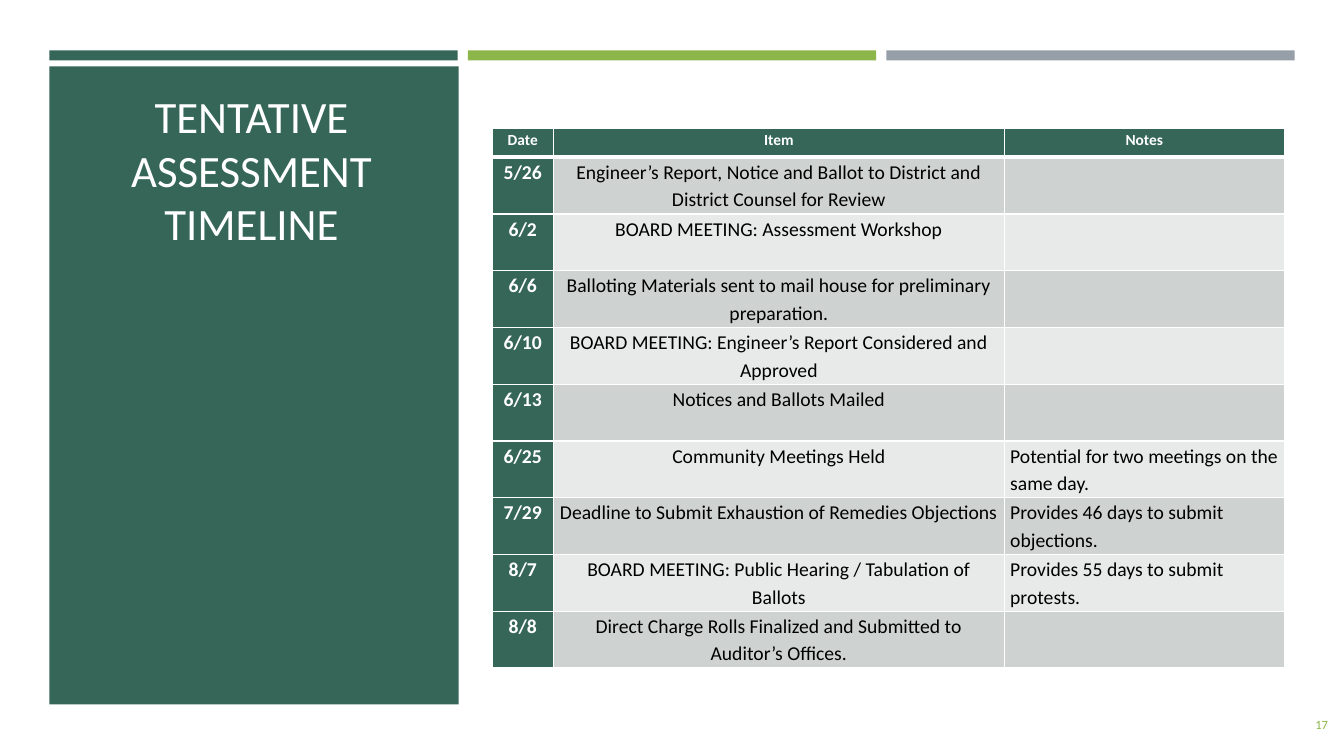
from lxml import etree
from pptx import Presentation
from pptx.dml.color import RGBColor
from pptx.enum.shapes import MSO_SHAPE
from pptx.enum.text import MSO_ANCHOR, PP_ALIGN
from pptx.oxml.ns import qn
from pptx.util import Inches, Pt

RECT = MSO_SHAPE.RECTANGLE
TOP, MIDDLE = MSO_ANCHOR.TOP, MSO_ANCHOR.MIDDLE
LEFT, CENTER, RIGHT = PP_ALIGN.LEFT, PP_ALIGN.CENTER, PP_ALIGN.RIGHT

GREEN, LIME, GRAY = "366658", "8CB64A", "969FA7"
WHITE, BLACK = "FFFFFF", "000000"
BANDS = ["CED3D1", "E8EAEA"]

TITLE = ["TENTATIVE", "ASSESSMENT TIMELINE"]
PAGE_NUMBER = "17"
HEADINGS = ("Date", "Item", "Notes")
TIMELINE = [
    ("5/26", "Engineer’s Report, Notice and Ballot to District and District Counsel for Review", ""),
    ("6/2", "BOARD MEETING: Assessment Workshop", ""),
    ("6/6", "Balloting Materials sent to mail house for preliminary preparation.", ""),
    ("6/10", "BOARD MEETING: Engineer’s Report Considered and Approved", ""),
    ("6/13", "Notices and Ballots Mailed", ""),
    ("6/25", "Community Meetings Held", "Potential for two meetings on the same day."),
    ("7/29", "Deadline to Submit Exhaustion of Remedies Objections", "Provides 46 days to submit objections."),
    ("8/7", "BOARD MEETING: Public Hearing / Tabulation of Ballots", "Provides 55 days to submit protests."),
    ("8/8", "Direct Charge Rolls Finalized and Submitted to Auditor’s Offices.", ""),
]
COLUMN_WIDTHS = [0.61, 4.47, 2.78]
TABLE_LEFT, TABLE_TOP, TABLE_HEIGHT, HEADER_HEIGHT = 4.88, 1.27, 5.36, 0.29
BAR_LEFT, BAR_STEP = 0.49, 4.15


def color(value):
    return RGBColor.from_string(value)


def add_block(left, top, width, height, fill):
    block = slide.shapes.add_shape(RECT, *map(Inches, (left, top, width, height)))
    block.shadow.inherit = False
    block.fill.solid()
    block.fill.fore_color.rgb = color(fill)
    block.line.fill.background()


def write(paragraph, text, align, size, ink, bold=False):
    paragraph.text = text
    paragraph.alignment = align
    for name, value in {"name": "Calibri", "size": Pt(size), "bold": bold}.items():
        setattr(paragraph.font, name, value)
    paragraph.font.color.rgb = color(ink)


def add_text(left, top, width, height, lines, anchor, *style):
    frame = slide.shapes.add_textbox(*map(Inches, (left, top, width, height))).text_frame
    frame.word_wrap = True
    frame.vertical_anchor = anchor
    for index, line in enumerate(lines):
        write(frame.add_paragraph() if index else frame.paragraphs[0], line, *style)


def add_borders(cell, widths):
    properties = cell._tc.get_or_add_tcPr()
    for side, width in widths.items():
        border = etree.SubElement(properties, qn("a:ln" + side), w=str(Pt(width)))
        fill = etree.SubElement(border, qn("a:solidFill"))
        etree.SubElement(fill, qn("a:srgbClr"), val=WHITE)


def fill_cell(cell, text, row, column):
    header = row == 0
    strong = header or column == 0
    add_borders(cell, {"L": 1, "R": 1, "T": 3 if row == 1 else 1, "B": 3 if header else 1})
    cell.fill.solid()
    cell.fill.fore_color.rgb = color(GREEN if strong else BANDS[(row - 1) % 2])
    margins = {"margin_left": 0.06, "margin_right": 0.06, "margin_top": 0, "margin_bottom": 0}
    for name, value in margins.items():
        setattr(cell, name, Inches(value))
    paragraph = cell.text_frame.paragraphs[0]
    write(paragraph, text, LEFT if column == 2 and not header else CENTER,
          11 if header else 14, WHITE if strong else BLACK, strong)
    paragraph.line_spacing = 1.15
    paragraph.space_after = Pt(8)


deck = Presentation()
deck.slide_width, deck.slide_height = Inches(13.33), Inches(7.5)
slide = deck.slides.add_slide(deck.slide_layouts[6])

for index, bar_color in enumerate([GREEN, LIME, GRAY]):
    add_block(BAR_LEFT + index * BAR_STEP, 0.5, 4.05, 0.1, bar_color)
add_block(BAR_LEFT, 0.66, 4.06, 6.33, GREEN)

add_text(12.12, 6.99, 1.15, 0.4, [PAGE_NUMBER], MIDDLE, RIGHT, 9, LIME)
add_text(0.59, 0.83, 3.81, 1.72, TITLE, TOP, CENTER, 32, WHITE)

rows = [HEADINGS] + TIMELINE
schedule = slide.shapes.add_table(
    len(rows), len(HEADINGS), Inches(TABLE_LEFT), Inches(TABLE_TOP),
    Inches(sum(COLUMN_WIDTHS)), Inches(TABLE_HEIGHT)).table
for column, width in zip(schedule.columns, COLUMN_WIDTHS):
    column.width = Inches(width)
entry_height = (TABLE_HEIGHT - HEADER_HEIGHT) / len(TIMELINE)
for row, entry in enumerate(rows):
    schedule.rows[row].height = Inches(entry_height if row else HEADER_HEIGHT)
    for column, text in enumerate(entry):
        fill_cell(schedule.cell(row, column), text, row, column)

deck.save("out.pptx")
